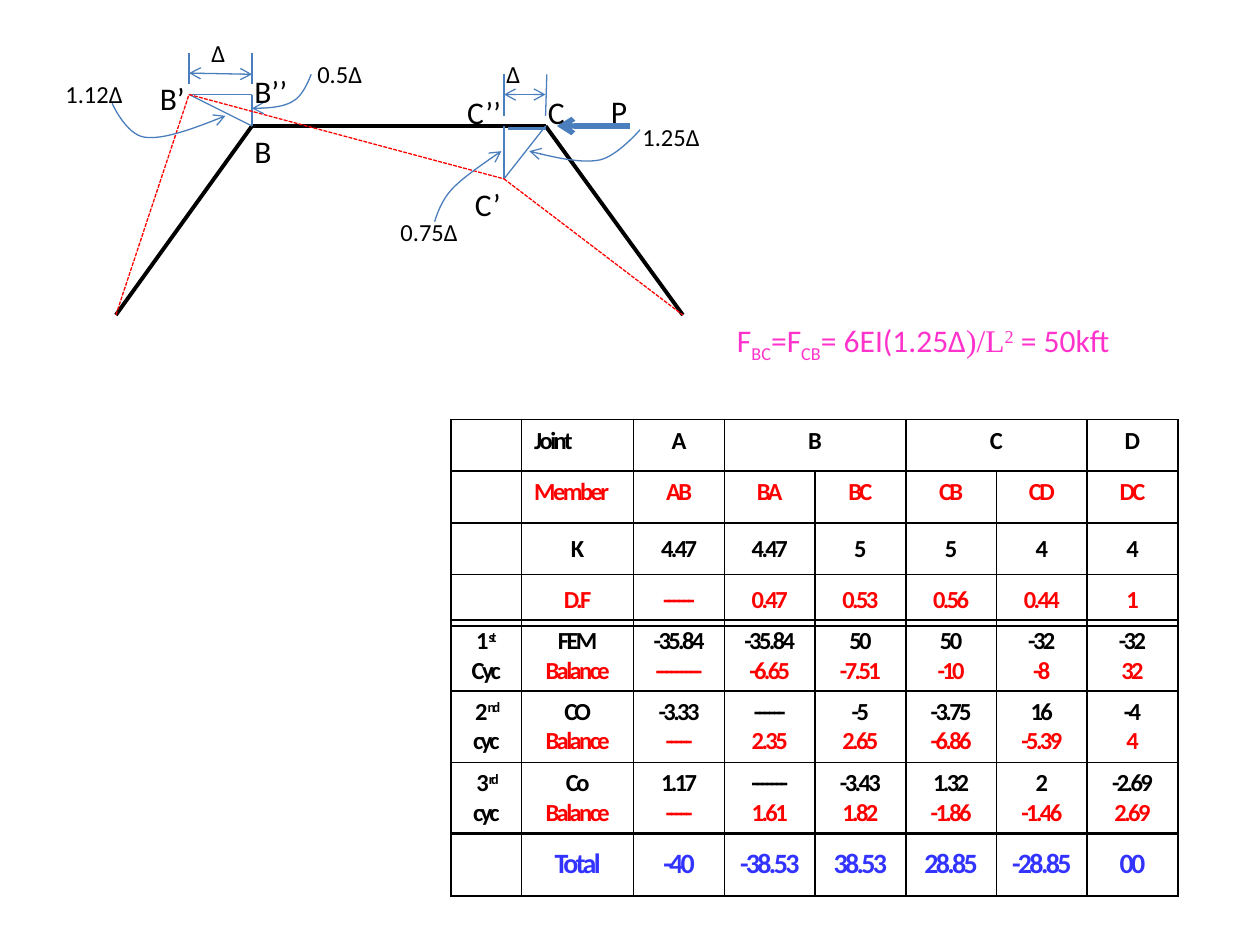
from dataclasses import dataclass

import pptx
import pptx.dml.color
import pptx.enum.dml
import pptx.enum.shapes
import pptx.enum.text
import pptx.oxml
import pptx.oxml.ns
import pptx.util
from lxml import etree

Point = tuple[float, float]
qn = pptx.oxml.ns.qn
ALIGN = pptx.enum.text.PP_ALIGN
ANCHOR = pptx.enum.text.MSO_ANCHOR

COLORS = {"black": "000000", "blue": "4B7EBC", "red": "FF0000",
          "pink": "FF33CC", "total": "3333FF"}

# Joints of the frame (inches); primes mark the displaced positions
A, B, C, D = (0.92, 2.5), (2, 1), (4.33, 1), (5.42, 2.5)
B1, B2 = (1.5, 0.75), (2, 0.75)
C1, C2 = (4, 1.42), (4, 1)


@dataclass
class Line:
    start: Point
    end: Point
    color: str = "blue"
    width: float = 0.75
    dashed: bool = False
    head: bool = False
    tail: bool = False


@dataclass
class Label:
    text: str
    left: float
    top: float
    width: float
    size: int = 18


@dataclass
class Row:
    cells: list[str]  # "|" separates paragraphs, "^" encloses a superscript
    colors: tuple[str, ...] = ("black",)
    size: int = 14
    middle: bool = False


@dataclass
class Block:
    top: float
    row_height: float
    rows: list[Row]


MEMBERS = [Line(B, C, "black", 2.25), Line(B, A, "black", 2.25), Line(C, D, "black", 2.25)]
DISPLACED = [Line(p, q, "red", dashed=True) for p, q in ((A, B1), (B1, C1), (C1, D))]
TRIANGLES = [Line(p, q) for p, q in ((B1, B), (B, B2), (B1, B2), (C1, C), (C1, C2))]
DIMENSIONS = [
    Line((1.5, 0.67), (1.5, 0.42)), Line((2, 0.67), (2, 0.42)),
    Line((1.5, 0.58), (2, 0.59), head=True, tail=True),
    Line((4, 0.92), (4, 0.59)), Line((4.33, 0.92), (4.34, 0.59)),
    Line((4, 0.75), (4.33, 0.75), head=True, tail=True),
]
LOAD = Line((5, 1), (4.42, 1), width=3, tail=True)
SWAY = Line((4.33, 1.02), (4.03, 1.02), width=2.25)

# Each leader is two Bezier pieces: start, then two controls and an end per piece
LEADERS = [
    [(2, 0.86), (2.13, 0.86), (2.26, 0.85), (2.33, 0.8), (2.41, 0.76), (2.47, 0.59), (2.47, 0.59)],
    [(1.79, 0.92), (1.54, 1.02), (1.3, 1.11), (1.15, 1.09), (1, 1.07), (0.89, 0.82), (0.89, 0.82)],
    [(3.98, 1.2), (3.82, 1.31), (3.66, 1.42), (3.58, 1.51), (3.49, 1.61), (3.45, 1.76), (3.45, 1.76)],
    [(4.2, 1.2), (4.4, 1.25), (4.61, 1.3), (4.76, 1.27), (4.9, 1.24), (5.08, 1.03), (5.08, 1.03)],
]
JOINT_LABELS = [
    Label("B’", 1.17, 0.58, 0.42), Label("C’", 3.67, 1.42, 0.42),
    Label("∆", 1.58, 0.25, 0.5, 14), Label("∆", 3.92, 0.42, 0.5, 14),
    Label("P", 4.75, 0.68, 0.42), Label("C", 4.25, 0.69, 0.58),
    Label("C’’", 3.61, 0.69, 0.58), Label("B", 1.92, 1, 0.42), Label("B’’", 1.92, 0.52, 0.58),
]
LEADER_LABELS = [
    Label("1.12∆", 0.42, 0.58, 0.75, 14), Label("1.25∆", 5, 0.92, 0.83, 14),
    Label("0.75∆", 3.08, 1.67, 0.83, 14), Label("0.5∆", 2.42, 0.42, 0.67, 14),
]
FORMULA = [("F", 0), ("BC", -25), ("=F", 0), ("CB", -25), ("= 6EI(1.25∆", 0),
           (")/L", 0), ("2", 30), (" = 50kft", 0)]
SERIF_PARTS = (")/L", "2")

TABLE_LEFT = 3.58
COLUMNS = [0.56, 0.89] + [0.72] * 6
CYCLE = ("black", "red")
BLOCKS = [
    Block(3.33, 0.41, [
        Row(["", "Joint", "A", "B", "", "C", "", "D"]),
        Row(["", "Member", "AB", "BA", "BC", "CB", "CD", "DC"], ("red",)),
        Row(["", "K", "4.47", "4.47", "5", "5", "4", "4"], middle=True),
        Row(["", "D.F", "------", "0.47", "0.53", "0.56", "0.44", "1"], ("red",), middle=True),
    ]),
    Block(4.92, 0.57, [Row(["1^st^|Cyc", "FEM|Balance", "-35.84|---------", "-35.84|-6.65",
                            "50|-7.51", "50|-10", "-32|-8", "-32|32"], CYCLE)]),
    Block(5.48, 0.57, [Row(["2^nd ^cyc", "CO|Balance", "-3.33|-----", "------|2.35",
                            "-5|2.65", "-3.75|-6.86", "16|-5.39", "-4|4"], CYCLE)]),
    Block(6.05, 0.57, [Row(["3^rd ^cyc", "Co|Balance", "1.17|-----", "-------|1.61",
                            "-3.43|1.82", "1.32|-1.86", "2|-1.46", "-2.69|2.69"], CYCLE)]),
    Block(6.61, 0.5, [Row(["", "Total", "-40", "-38.53", "38.53", "28.85", "-28.85", "00"],
                          ("total",), 16, True)]),
]


def inch(value: float) -> pptx.util.Length:
    return pptx.util.Cm(value * 2.54)


def rgb(name: str) -> pptx.dml.color.RGBColor:
    return pptx.dml.color.RGBColor.from_string(COLORS[name])


def style_font(font, size: int, color: str, bold: bool = False) -> None:
    font.name, font.size, font.bold = "Calibri", pptx.util.Pt(size), bold
    font.color.rgb = rgb(color)


def add_run(p, text: str, baseline: int = 0):
    r = p.add_run()
    r.text = text
    if baseline:
        r.font._element.set("baseline", str(baseline * 1000))
    return r


def style_line(shape, line: Line) -> None:
    shape.line.color.rgb = rgb(line.color)
    shape.line.width = pptx.util.Pt(line.width)
    if line.dashed:
        shape.line.dash_style = pptx.enum.dml.MSO_LINE.SQUARE_DOT
    ln = shape.element.spPr.find(qn("a:ln"))
    for tag, wanted in (("a:headEnd", line.head), ("a:tailEnd", line.tail)):
        if wanted:
            etree.SubElement(ln, qn(tag), type="arrow")


def add_line(shapes, line: Line) -> None:
    kind = pptx.enum.shapes.MSO_CONNECTOR.STRAIGHT
    sp = shapes.add_connector(kind, *map(inch, line.start + line.end))
    style_line(sp, line)
    etree.SubElement(sp.element.spPr, qn("a:effectLst"))


def bezier(p0: Point, p1: Point, p2: Point, p3: Point, steps: int = 16) -> list[Point]:
    """Points along a cubic curve, without its start."""
    points = []
    for t in (i / steps for i in range(1, steps + 1)):
        weights = ((1 - t) ** 3, 3 * t * (1 - t) ** 2, 3 * t * t * (1 - t), t ** 3)
        points.append(tuple(sum(w * p[axis] for w, p in zip(weights, (p0, p1, p2, p3)))
                            for axis in (0, 1)))
    return points


def add_leader(shapes, controls: list[Point]) -> None:
    points = bezier(*controls[:4]) + bezier(*controls[3:])
    builder = shapes.build_freeform(*map(inch, controls[0]))
    builder.add_line_segments([(inch(x), inch(y)) for x, y in points], close=False)
    sp = builder.convert_to_shape()
    sp.fill.background()
    sp.shadow.inherit = False
    style_line(sp, Line(controls[0], controls[-1], head=True))


def add_label(shapes, label: Label, color: str = "black"):
    height = 0.4 if label.size == 18 else 0.34
    sp = shapes.add_textbox(*map(inch, (label.left, label.top, label.width, height)))
    sp.text_frame.word_wrap = True
    p = sp.text_frame.paragraphs[0]
    style_font(p.font, label.size, color)
    if label.text:
        add_run(p, label.text)
    return p


def fill_cell(cell, text: str, row: Row, left_aligned: bool) -> None:
    cell.fill.background()
    cell.vertical_anchor = ANCHOR.MIDDLE if row.middle else ANCHOR.TOP
    tcPr = cell._tc.get_or_add_tcPr()
    for i, side in enumerate(("a:lnL", "a:lnR", "a:lnT", "a:lnB")):
        ln = etree.Element(qn(side), w=str(pptx.util.Pt(1)))
        fill = etree.SubElement(ln, qn("a:solidFill"))
        etree.SubElement(fill, qn("a:srgbClr"), val=COLORS["black"])
        tcPr.insert(i, ln)
    tf = cell.text_frame
    for i, content in enumerate(text.split("|")):
        p = tf.add_paragraph() if i else tf.paragraphs[0]
        p.alignment = ALIGN.LEFT if left_aligned else ALIGN.CENTER
        color = "black" if "^" in text else row.colors[i]
        style_font(p.font, row.size, color, bold=True)
        p.font._element.set("spc", "-150")
        for j, part in enumerate(content.split("^")):
            if part:
                add_run(p, part, 30 * (j % 2))


def add_block(shapes, block: Block) -> None:
    height = block.row_height * len(block.rows)
    frame = shapes.add_table(len(block.rows), len(COLUMNS), inch(TABLE_LEFT), inch(block.top),
                             inch(sum(COLUMNS)), inch(height))
    table = frame.table
    table.first_row = table.horz_banding = False
    for column, width in zip(table.columns, COLUMNS):
        column.width = inch(width)
    for r, row in enumerate(block.rows):
        table.rows[r].height = inch(block.row_height)
        for c, text in enumerate(row.cells):
            fill_cell(table.cell(r, c), text, row, text in ("Joint", "Member"))
            if c > 1 and not text:
                table.cell(r, c - 1).merge(table.cell(r, c))


def main() -> None:
    prs = pptx.Presentation()
    prs.slide_width, prs.slide_height = inch(10), inch(7.5)
    s = prs.slides.add_slide(prs.slide_layouts[6])

    frame = s.shapes.add_group_shape().shapes
    for line in MEMBERS + TRIANGLES + DISPLACED + DIMENSIONS + [LOAD]:
        add_line(frame, line)
    for controls in LEADERS:
        add_leader(frame, controls)
    for label in JOINT_LABELS:
        add_label(frame, label)
    for label in LEADER_LABELS:
        add_label(s.shapes, label)
    add_line(s.shapes, SWAY)

    p = add_label(s.shapes, Label("", 5.75, 2.5, 3.25), "pink")
    for text, baseline in FORMULA:
        r = add_run(p, text, baseline)
        if text in SERIF_PARTS:
            r.font.name = "Times New Roman"
    for block in BLOCKS:
        add_block(s.shapes, block)
    prs.save("out.pptx")


if __name__ == "__main__":
    main()
